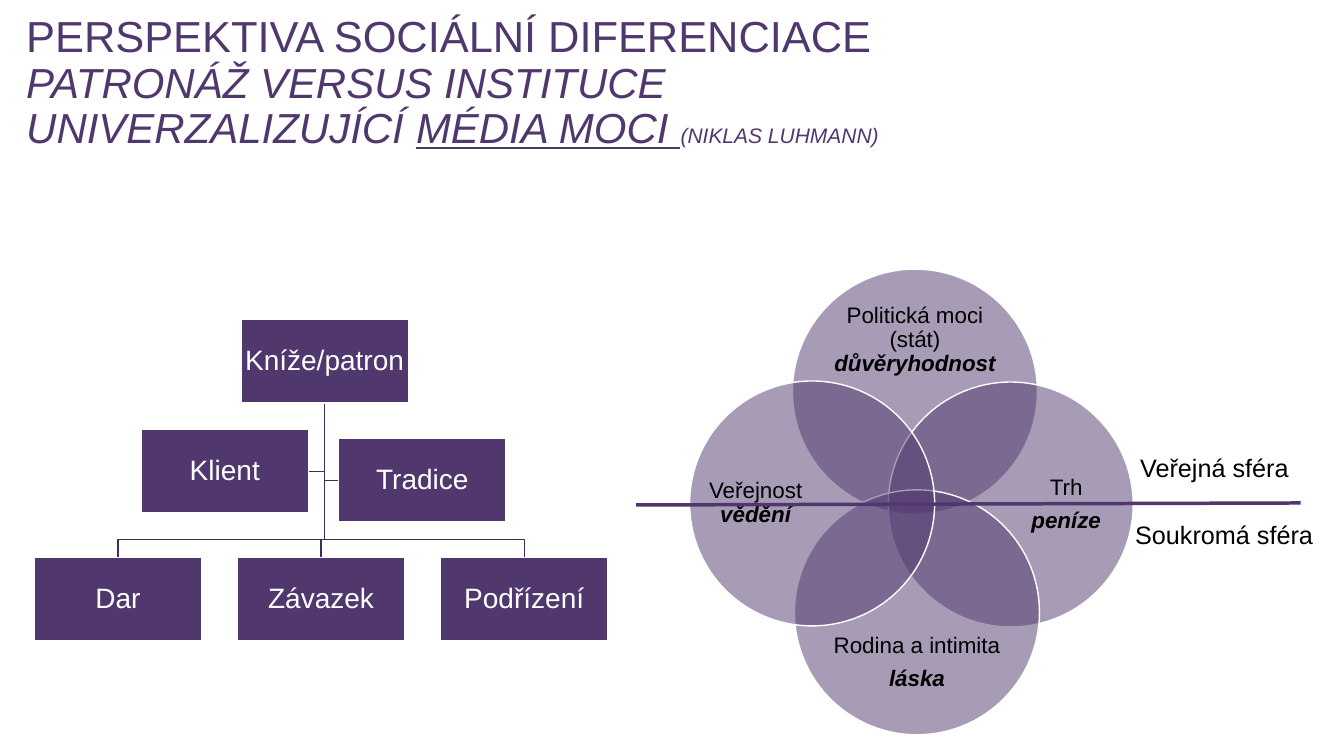
from copy import deepcopy

from lxml import etree
from pptx import Presentation
from pptx.dml.color import RGBColor
from pptx.enum.shapes import MSO_CONNECTOR, MSO_SHAPE
from pptx.enum.text import MSO_ANCHOR, MSO_AUTO_SIZE, PP_ALIGN
from pptx.oxml.ns import qn
from pptx.util import Inches, Pt

PURPLE = RGBColor(0x50, 0x38, 0x6F)
DARK_PURPLE = RGBColor(0x40, 0x2D, 0x59)
WHITE = RGBColor(0xFF, 0xFF, 0xFF)
BLACK = RGBColor(0, 0, 0)
LEFT, CENTER = PP_ALIGN.LEFT, PP_ALIGN.CENTER
TOP, MIDDLE = MSO_ANCHOR.TOP, MSO_ANCHOR.MIDDLE
NO_FIT = MSO_AUTO_SIZE.NONE
OVAL, RECTANGLE = MSO_SHAPE.OVAL, MSO_SHAPE.RECTANGLE
STRAIGHT = MSO_CONNECTOR.STRAIGHT

ITALIC = {"italic": True}
STRONG = {"bold": True, "italic": True}

TITLE_LINES = [
    [("PERSPEKTIVA SOCIÁLNÍ DIFERENCIACE", {"size": Pt(31)})],
    [("PATRONÁŽ VERSUS INSTITUCE", ITALIC)],
    [
        ("UNIVERZALIZUJÍCÍ ", ITALIC),
        ("MÉDIA MOCI ", {"italic": True, "underline": True}),
        ("(NIKLAS LUHMANN)", {"italic": True, "size": Pt(15)}),
    ],
]

PATRON = ("Kníže/patron", 2.39, 3.17)
ASSISTANTS = [("Klient", 1.4, 4.26), ("Tradice", 3.36, 4.35)]
SUBORDINATES = ["Dar", "Závazek", "Podřízení"]
BOX_W, BOX_H = 1.66, 0.83
SUBORDINATE_LEFT, SUBORDINATE_TOP, SUBORDINATE_STEP = 0.34, 5.53, 2.015
BRANCH_Y = 5.35

DIAMETER = 2.43
WIDE, TALL = (1.87, 0.77), (0.93, 1.87)
SPHERES = [
    ((7.86, 2.67), (8.14, 2.99), WIDE,
     [[("Politická moci (stát) ", {}), ("důvěryhodnost", STRONG)]]),
    ((8.81, 3.79), (10.11, 4.07), TALL,
     [[("Trh", {})], [("peníze", STRONG)]]),
    ((7.88, 4.86), (8.16, 6.19), WIDE,
     [[("Rodina a intimita", {})], [("láska", STRONG)]]),
    ((6.84, 3.78), (7.03, 4.06), TALL,
     [[("Veřejnost ", {}), ("vědění", STRONG)]]),
]

DIVIDER = (6.31, 5.01, 12.9, 4.99)
DIVIDER_LABELS = [
    ("Soukromá sféra", 11.16, 5.1, 1.98),
    ("Veřejná sféra", 11.21, 4.44, 1.69),
]


def add_runs(paragraph, runs, size, color):
    for text, formats in runs:
        run = paragraph.add_run()
        run.text = text
        run.font.color.rgb = color
        for key, value in {"name": "Arial", "size": size, **formats}.items():
            setattr(run.font, key, value)


def set_frame(frame, inset, anchor, wrap=True):
    formats = {"word_wrap": wrap, "vertical_anchor": anchor, "auto_size": NO_FIT}
    for side in ("left", "right", "top", "bottom"):
        formats["margin_" + side] = Inches(inset)
    for key, value in formats.items():
        setattr(frame, key, value)


def write_centered(frame, paragraphs, size, color, inset):
    set_frame(frame, inset, MIDDLE)
    for index, runs in enumerate(paragraphs):
        paragraph = frame.add_paragraph() if index else frame.paragraphs[0]
        paragraph.alignment = CENTER
        paragraph.line_spacing = 0.9
        paragraph.space_after = Pt(6)
        add_runs(paragraph, runs, size, color)


def add_filled(kind, x, y, w, h):
    shape = slide.shapes.add_shape(kind, Inches(x), Inches(y), Inches(w), Inches(h))
    shape.shadow.inherit = False
    shape.fill.solid()
    shape.fill.fore_color.rgb = PURPLE
    shape.line.color.rgb = WHITE
    shape.line.width = Pt(1)
    return shape


def add_branch(points):
    corners = [(Inches(x), Inches(y)) for x, y in points]
    builder = slide.shapes.build_freeform(*corners[0])
    builder.add_line_segments(corners[1:], close=False)
    branch = builder.convert_to_shape()
    branch.shadow.inherit = False
    branch.fill.background()
    branch.line.color.rgb = DARK_PURPLE
    branch.line.width = Pt(1)


prs = Presentation()
prs.slide_width, prs.slide_height = Inches(13.33), Inches(7.5)
slide = prs.slides.add_slide(prs.slide_layouts[5])

title = slide.shapes.title
title.left, title.top = Inches(0.26), Inches(0.15)
title.width, title.height = Inches(12.21), Inches(2.1)
set_frame(title.text_frame, 0, TOP)
heading = title.text_frame.paragraphs[0]
heading.alignment = LEFT
heading.line_spacing = 0.9
for index, runs in enumerate(TITLE_LINES):
    if index:
        heading.add_line_break()
        heading._p[-1].append(deepcopy(heading.runs[-1]._r.rPr))
    add_runs(heading, runs, Pt(30), PURPLE)

for (x, y), (text_x, text_y), (text_w, text_h), paragraphs in SPHERES:
    circle = add_filled(OVAL, x, y, DIAMETER, DIAMETER)
    circle_color = circle._element.spPr.find(qn("a:solidFill"))[0]
    etree.SubElement(circle_color, qn("a:alpha")).set("val", "50000")
    caption = slide.shapes.add_textbox(
        Inches(text_x), Inches(text_y), Inches(text_w), Inches(text_h))
    write_centered(caption.text_frame, paragraphs, Pt(16), BLACK, 0)

subordinates = [
    (name, SUBORDINATE_LEFT + index * SUBORDINATE_STEP, SUBORDINATE_TOP)
    for index, name in enumerate(SUBORDINATES)
]
trunk_x, trunk_y = PATRON[1] + BOX_W / 2, PATRON[2] + BOX_H
for name, x, y in ASSISTANTS:
    near_edge = x if x > trunk_x else x + BOX_W
    middle = y + BOX_H / 2
    add_branch([(trunk_x, trunk_y), (trunk_x, middle), (near_edge, middle)])
for name, x, y in subordinates:
    center = x + BOX_W / 2
    add_branch([(trunk_x, trunk_y), (trunk_x, BRANCH_Y), (center, BRANCH_Y), (center, y)])
for name, x, y in [PATRON] + subordinates + ASSISTANTS:
    box = add_filled(RECTANGLE, x, y, BOX_W, BOX_H)
    write_centered(box.text_frame, [[(name, {})]], Pt(20), WHITE, 0.01)

divider = slide.shapes.add_connector(STRAIGHT, *[Inches(value) for value in DIVIDER])
divider.line.color.rgb = PURPLE
divider.line.width = Pt(2.5)
etree.SubElement(divider._element.spPr, qn("a:effectLst"))

for text, x, y, w in DIVIDER_LABELS:
    label = slide.shapes.add_textbox(Inches(x), Inches(y), Inches(w), Inches(0.4))
    label.text_frame.word_wrap = False
    add_runs(label.text_frame.paragraphs[0], [(text, {})], Pt(18), BLACK)

prs.save("out.pptx")
